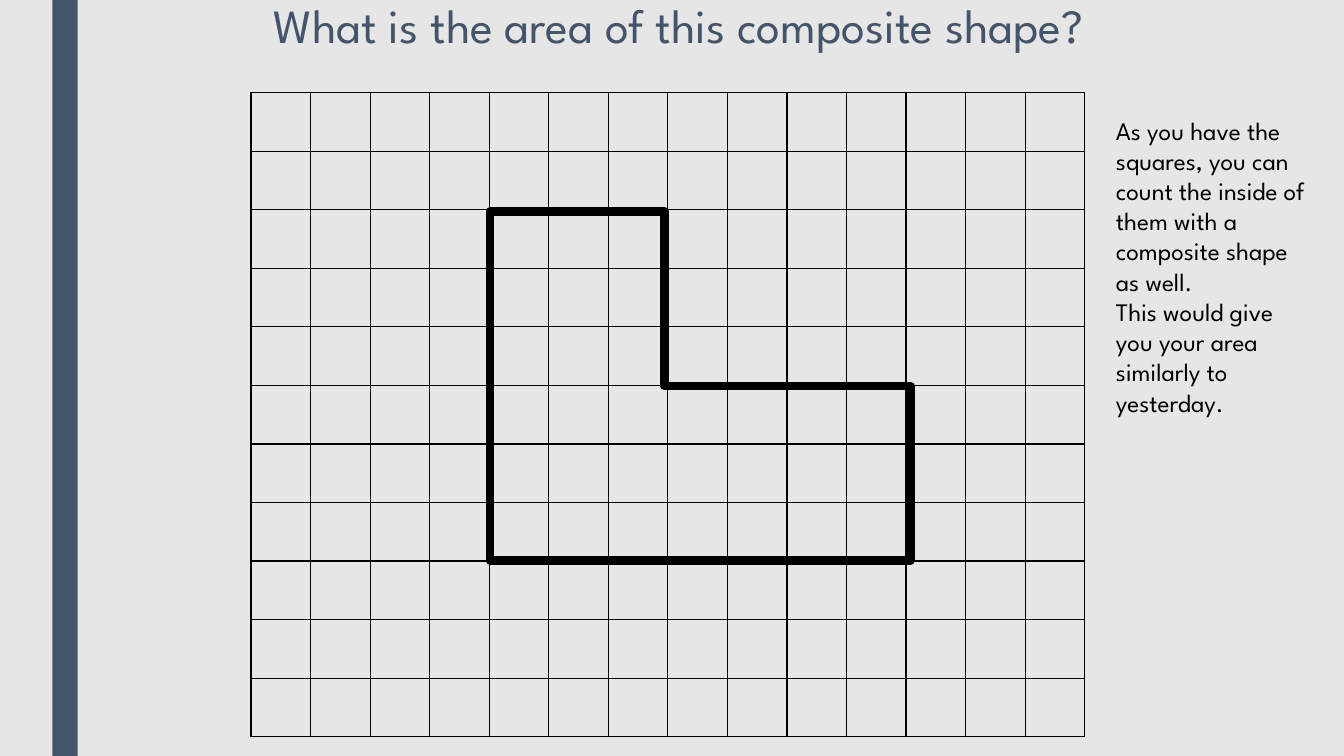
from dataclasses import dataclass

from lxml.etree import SubElement
from pptx import Presentation
from pptx.dml.color import RGBColor
from pptx.enum.shapes import MSO_SHAPE
from pptx.enum.text import MSO_ANCHOR, MSO_AUTO_SIZE, PP_ALIGN
from pptx.oxml.ns import qn
from pptx.slide import Slide
from pptx.table import _Cell
from pptx.util import Inches, Pt


@dataclass(frozen=True)
class Theme:
    font: str = "League Spartan"
    background: str = "E7E6E6"
    accent: str = "44546A"
    ink: str = "000000"
    title_size: int = 34
    body_size: int = 18
    grid_line: int = 1
    outline: int = 6


@dataclass(frozen=True)
class Box:
    left: float
    top: float
    width: float
    height: float

    def emu(self) -> list[int]:
        return [Inches(v) for v in (self.left, self.top, self.width, self.height)]


THEME = Theme()
COLUMNS, ROWS = 14, 11
SIDE_BAR = Box(0.52, 0, 0.25, 7.5)
TITLE = Box(1.67, 0, 10.12, 0.84)
GRID = Box(2.49, 0.92, 8.27, 6.39)
COMPOSITE = Box(4.86, 2.1, 4.17, 3.46)
NOTE = Box(10.97, 1.09, 2.15, 3.43)


def rgb(color: str) -> RGBColor:
    return RGBColor.from_string(color)


def add_text(slide: Slide, box: Box, text: str, *, size: int, color: str,
             align: PP_ALIGN = PP_ALIGN.LEFT, line_spacing: float = 1.0,
             before: int = 0, after: int = 0,
             auto_size: MSO_AUTO_SIZE = MSO_AUTO_SIZE.NONE) -> None:
    """Add a wrapped text box; each line of text is a paragraph."""
    tf = slide.shapes.add_textbox(*box.emu()).text_frame
    tf.word_wrap = True
    tf.auto_size = auto_size
    tf.vertical_anchor = MSO_ANCHOR.TOP
    tf.text = text
    for p in tf.paragraphs:
        p.alignment = align
        p.line_spacing = line_spacing
        p.space_before, p.space_after = Pt(before), Pt(after)
        for r in p.runs:
            r.font.name = THEME.font
            r.font.size = Pt(size)
            r.font.color.rgb = rgb(color)


def add_outline(slide: Slide, kind: MSO_SHAPE, box: Box, *,
                fill: str = "", line: str = "", weight: int = 0) -> None:
    """Add a preset shape with an optional fill and line."""
    sp = slide.shapes.add_shape(kind, *box.emu())
    sp.shadow.inherit = False
    if fill:
        sp.fill.solid()
        sp.fill.fore_color.rgb = rgb(fill)
    else:
        sp.fill.background()
    if line:
        sp.line.color.rgb = rgb(line)
        sp.line.width = Pt(weight)
    else:
        sp.line.fill.background()


def set_borders(cell: _Cell, color: str, weight: int) -> None:
    """Clear the cell fill and rule all four sides."""
    cell.fill.background()
    props = cell._tc.get_or_add_tcPr()
    for i, side in enumerate(("lnL", "lnR", "lnT", "lnB")):
        ln = props.makeelement(qn(f"a:{side}"), {"w": str(Pt(weight))})
        fill = SubElement(ln, qn("a:solidFill"))
        SubElement(fill, qn("a:srgbClr"), val=color)
        props.insert(i, ln)


def add_grid(slide: Slide, box: Box, rows: int, columns: int) -> None:
    """Add an empty table of equal squares."""
    table = slide.shapes.add_table(rows, columns, *box.emu()).table
    table.first_row = table.horz_banding = False
    for column in table.columns:
        column.width = Inches(box.width / columns)
    for row in table.rows:
        row.height = Inches(box.height / rows)
    for cell in table.iter_cells():
        set_borders(cell, THEME.ink, THEME.grid_line)


def main() -> None:
    prs = Presentation()
    prs.slide_width, prs.slide_height = Inches(13.33), Inches(7.5)
    slide = prs.slides.add_slide(prs.slide_layouts[6])

    # Background and side bar
    slide.background.fill.solid()
    slide.background.fill.fore_color.rgb = rgb(THEME.background)
    add_outline(slide, MSO_SHAPE.RECTANGLE, SIDE_BAR, fill=THEME.accent)

    # Question
    add_text(slide, TITLE, "What is the area of this composite shape?",
             size=THEME.title_size, color=THEME.accent, align=PP_ALIGN.CENTER,
             line_spacing=0.84, before=10, after=2)

    # Squared grid with the composite shape on it
    add_grid(slide, GRID, ROWS, COLUMNS)
    add_outline(slide, MSO_SHAPE.CORNER, COMPOSITE,
                line=THEME.ink, weight=THEME.outline)

    # Explanation
    add_text(slide, NOTE,
             "As you have the squares, you can count the inside of them "
             "with a composite shape as well.\n"
             "This would give you your area similarly to yesterday.",
             size=THEME.body_size, color=THEME.ink,
             auto_size=MSO_AUTO_SIZE.SHAPE_TO_FIT_TEXT)

    prs.save("out.pptx")


if __name__ == "__main__":
    main()
